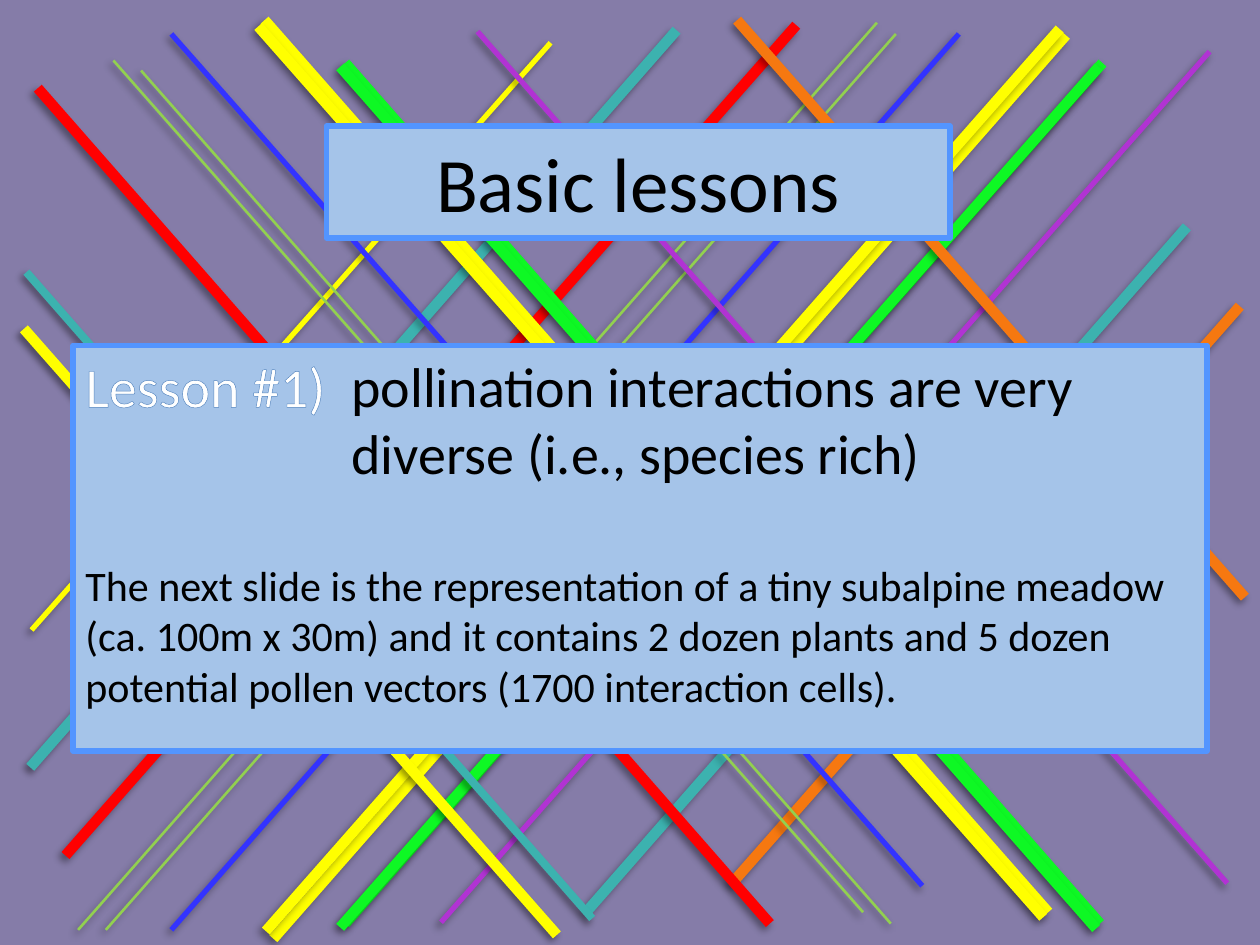
from lxml.etree import SubElement
from pptx import Presentation
from pptx.dml.color import RGBColor
from pptx.enum.shapes import MSO_CONNECTOR, MSO_SHAPE
from pptx.enum.text import MSO_ANCHOR, PP_ALIGN
from pptx.oxml import parse_xml
from pptx.oxml.ns import nsdecls, qn
from pptx.util import Inches, Pt

HUES = {
    "back": "857CA8", "panel": "A5C4E9", "edge": "5395FF",
    "black": "000000", "white": "FFFFFF", "trim": "4F81BD",
    "yellow": "FFFF00", "teal": "3CB2AF", "green": "0EF824",
    "blue": "3333FF", "purple": "B133D3", "orange": "F67810",
    "lime": "92D050", "red": "FF0000",
}


def hue(name):
    return RGBColor.from_string(HUES[name])


def write(para, text, size=32, color="black", trim=None):
    run = para.add_run()
    run.text = text
    font = run.font
    font.name, font.size = "Calibri", Pt(size)
    font.color.rgb = hue(color)
    if trim:
        font._element.insert(0, parse_xml(
            f'<a:ln {nsdecls("a")} w="{Pt(0.8)}"><a:solidFill>'
            f'<a:srgbClr val="{HUES[trim]}"/></a:solidFill></a:ln>'))


deck = Presentation()
deck.slide_width, deck.slide_height = Inches(10), Inches(7.5)
slide = deck.slides.add_slide(deck.slide_layouts[6])
fill = slide.background.fill
fill.solid()
fill.fore_color.rgb = hue("back")

# Crossing lines, back to front: colour, width, start, end
lines = [
    ("yellow", 3, 4.37, 0.34, 0.25, 5),
    ("teal", 6, 9.42, 1.8, 4.66, 7.23),
    ("green", 6, 8.75, 0.5, 2.74, 7.33),
    ("yellow", 6, 8.46, 0.28, 2.17, 7.45),
    ("blue", 3, 7.61, 0.27, 1.36, 7.38),
    ("yellow", 6, 8.41, 0.23, 2.11, 7.39),
    ("green", 6, 8.72, 0.53, 2.7, 7.36),
    ("purple", 3, 9.6, 0.41, 3.5, 7.32),
    ("orange", 6, 9.84, 2.43, 5.81, 7.01),
    ("lime", 1.5, 7.11, 0.27, 0.84, 7.38),
    ("teal", 6, 5.37, 0.24, 0.24, 6.09),
    ("red", 6, 6.32, 0.2, 0.52, 6.79),
    ("lime", 1.5, 6.96, 0.18, 0.62, 7.38),
    ("yellow", 6, 0.19, 2.61, 4.42, 7.42),
    ("green", 6, 2.74, 0.5, 8.73, 7.33),
    ("yellow", 6, 2.1, 0.16, 8.32, 7.24),
    ("lime", 1.5, 1.12, 0.56, 7.07, 7.33),
    ("teal", 4.5, 0.21, 2.16, 4.7, 7.29),
    ("red", 6, 0.3, 0.7, 6.11, 7.33),
    ("lime", 1.5, 0.9, 0.48, 6.85, 7.24),
    ("blue", 3, 1.36, 0.27, 7.32, 7.03),
    ("yellow", 6, 2.05, 0.21, 8.28, 7.28),
    ("green", 6, 2.7, 0.53, 8.7, 7.37),
    ("purple", 3, 3.79, 0.25, 9.74, 7.01),
    ("orange", 6, 5.85, 0.16, 9.88, 4.74),
]
for color, width, *ends in lines:
    line = slide.shapes.add_connector(
        MSO_CONNECTOR.STRAIGHT, *(Inches(end) for end in ends))
    line.line.color.rgb = hue(color)
    line.line.width = Pt(width)
    line._element.spPr.append(parse_xml(
        f'<a:effectLst {nsdecls("a")}><a:outerShdw blurRad="{Pt(4)}" '
        f'dist="{Pt(3)}" dir="{135 * 60000}" rotWithShape="0">'
        f'<a:srgbClr val="{HUES["black"]}"><a:alpha val="40000"/></a:srgbClr>'
        '</a:outerShdw></a:effectLst>'))

# Lesson and title panels
frames = []
for area, anchor in [
    ((0.58, 2.74, 9, 3.22), MSO_ANCHOR.TOP),
    ((2.59, 1, 4.95, 0.89), MSO_ANCHOR.MIDDLE),
]:
    box = slide.shapes.add_shape(
        MSO_SHAPE.RECTANGLE, *(Inches(side) for side in area))
    box.shadow.inherit = False
    box.fill.solid()
    box.fill.fore_color.rgb = hue("panel")
    box.line.color.rgb = hue("edge")
    box.line.width = Pt(3)
    frame = box.text_frame
    frame.word_wrap = True
    frame.vertical_anchor = anchor
    frames.append(frame)
body, title = frames

# Lesson heading with a hanging indent
head = body.paragraphs[0]
head.alignment = PP_ALIGN.LEFT
hang = Inches(2.11)
props = head._p.get_or_add_pPr()
props.set("marL", str(hang))
props.set("indent", str(-hang))
tabs = SubElement(props, qn("a:tabLst"))
SubElement(tabs, qn("a:tab"), pos=str(hang), algn="l")
write(head, "Lesson #1)", color="white", trim="trim")
write(head, "\tpollination interactions are very diverse (i.e., species rich)")

# Explanation
note = body.add_paragraph()
note.alignment = PP_ALIGN.LEFT
note.space_before = Pt(42)
write(note, "The next slide is the representation of a tiny subalpine meadow "
      "(ca. 100m x 30m) and it contains 2 dozen plants and 5 dozen potential "
      "pollen vectors (1700 interaction cells).", size=24)

# Title
title.paragraphs[0].alignment = PP_ALIGN.CENTER
write(title.paragraphs[0], "Basic lessons", size=44)

deck.save("out.pptx")
